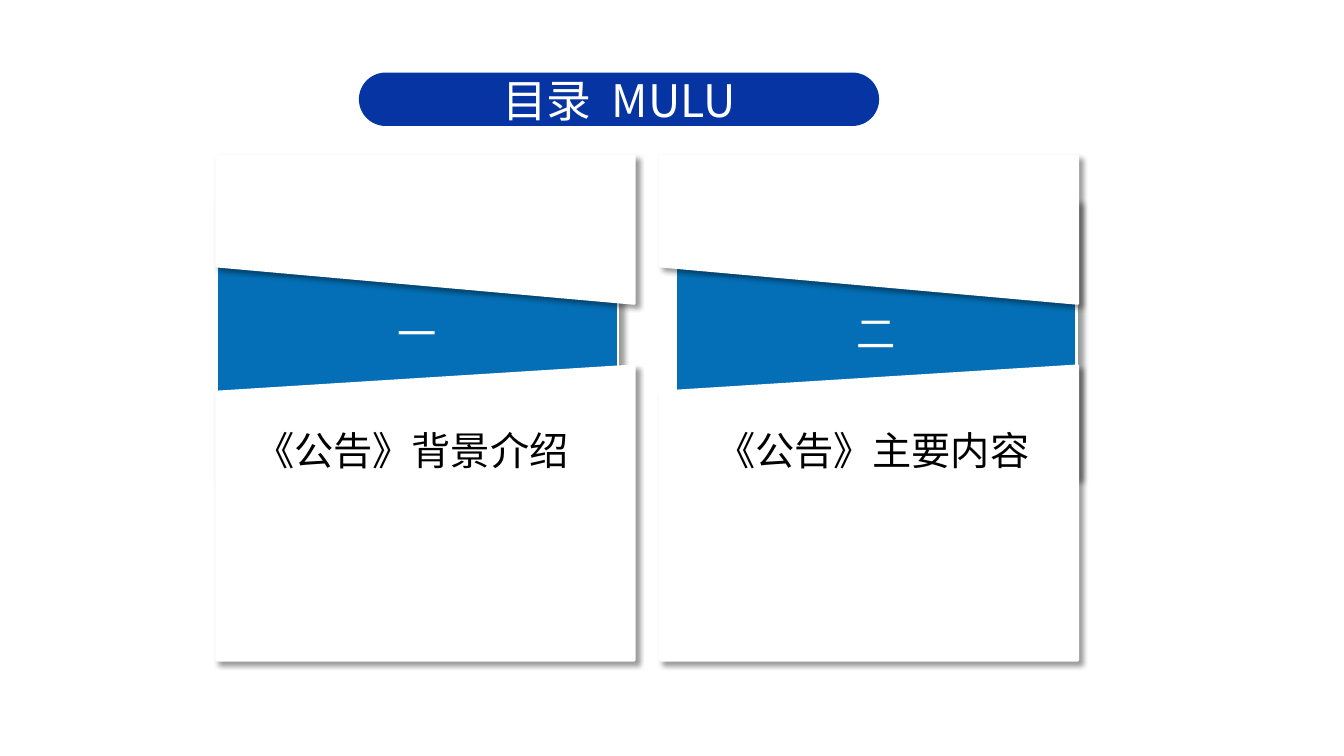
from lxml.etree import SubElement
from pptx import Presentation
from pptx.dml.color import RGBColor
from pptx.enum.shapes import MSO_SHAPE
from pptx.enum.text import MSO_ANCHOR, PP_ALIGN
from pptx.oxml.ns import qn
from pptx.util import Inches, Pt

COLORS = {"white": "FFFFFF", "black": "000000", "band": "046FB6", "title": "0634A3"}
HEADING_FONT = "Noto Sans CJK SC"
NUMBER_FONT = "Calibri"


def rgb(name):
    return RGBColor.from_string(COLORS[name])


class AgendaSlide:
    """Holds the style and the slide being built."""

    def __init__(self, deck):
        self.slide = deck.slides.add_slide(deck.slide_layouts[5])
        self.shapes = self.slide.shapes

    def set_text(self, shape, text, size, font, color, bottom=0.05, spacing=1.0):
        frame = shape.text_frame
        frame.word_wrap = True
        frame.vertical_anchor = MSO_ANCHOR.MIDDLE
        frame.margin_left = frame.margin_right = Inches(0.1)
        frame.margin_top, frame.margin_bottom = Inches(0.05), Inches(bottom)
        frame.text = text
        line = frame.paragraphs[0]
        line.alignment = PP_ALIGN.CENTER
        line.line_spacing = spacing
        line.font.size, line.font.name = Pt(size), font
        line.font.color.rgb = rgb(color)
        # East Asian characters need their own typeface entry
        default = line.font._element
        SubElement(default, qn("a:ea"), typeface=font)

    def paint(self, shape, fill, shadow_angle=None):
        shape.fill.solid()
        shape.fill.fore_color.rgb = rgb(fill)
        shape.shadow.inherit = False
        if shadow_angle is None:
            shape.line.fill.background()
            return
        shape.line.color.rgb = rgb("white")
        shape.line.width = Pt(2)
        effects = shape._element.spPr.find(qn("a:effectLst"))
        shadow = SubElement(effects, qn("a:outerShdw"), blurRad=str(Pt(4)),
                            dist=str(Pt(3)), dir=str(shadow_angle * 60000),
                            algn="ctr", rotWithShape="0")
        tint = SubElement(shadow, qn("a:srgbClr"), val=COLORS["black"])
        SubElement(tint, qn("a:alpha"), val="40000")

    def title(self, text, *box):
        box = [Inches(v) for v in box]
        pill = self.shapes.add_shape(MSO_SHAPE.ROUNDED_RECTANGLE, *box)
        pill.adjustments[0] = 0.5
        self.paint(pill, "title")
        heading = self.shapes.title
        heading.left, heading.top, heading.width, heading.height = box
        self.set_text(heading, text, 32, HEADING_FONT, "white")
        # Bring the heading in front of its pill
        self.shapes._spTree.append(heading._element)

    def band(self, number, left):
        band = self.shapes.add_shape(MSO_SHAPE.RECTANGLE, Inches(left), Inches(2.03),
                                     Inches(3.98), Inches(2.74))
        self.paint(band, "band", 0)
        self.set_text(band, number, 28, NUMBER_FONT, "white", bottom=0.24)

    def card(self, left):
        """Two slanted panels that leave a wedge open over the band."""
        right = left + 4.14
        lower = [(right, 3.63), (right, 6.55), (left, 6.55), (left, 3.89)]
        upper = [(left, 1.55), (right, 1.55), (right, 3.01), (left, 2.64)]
        lower, upper = ([(Inches(x), Inches(y)) for x, y in panel]
                        for panel in (lower, upper))
        outline = self.shapes.build_freeform(*lower[0])
        outline.add_line_segments(lower[1:], close=True)
        outline.move_to(*upper[0])
        outline.add_line_segments(upper[1:], close=True)
        self.paint(outline.convert_to_shape(), "white", 45)

    def caption(self, text, left):
        caption = self.shapes.add_textbox(Inches(left), Inches(4.23),
                                          Inches(3.87), Inches(0.52))
        self.set_text(caption, text, 28, HEADING_FONT, "black", spacing=0.9)


def main():
    deck = Presentation()
    deck.slide_width, deck.slide_height = Inches(13.33), Inches(7.5)
    agenda = AgendaSlide(deck)

    # Sections: number, caption, then left edges of band, card and caption
    sections = [
        ("一", "《公告》背景介绍", 2.15, 2.15, 2.15),
        ("二", "《公告》主要内容", 6.7, 6.55, 6.72),
    ]
    for number, topic, band_left, card_left, topic_left in sections:
        agenda.band(number, band_left)
        agenda.card(card_left)
        agenda.caption(topic, topic_left)

    # Title pill
    agenda.title("目录  MULU", 3.56, 0.72, 5.16, 0.53)

    deck.save("out.pptx")


if __name__ == "__main__":
    main()
